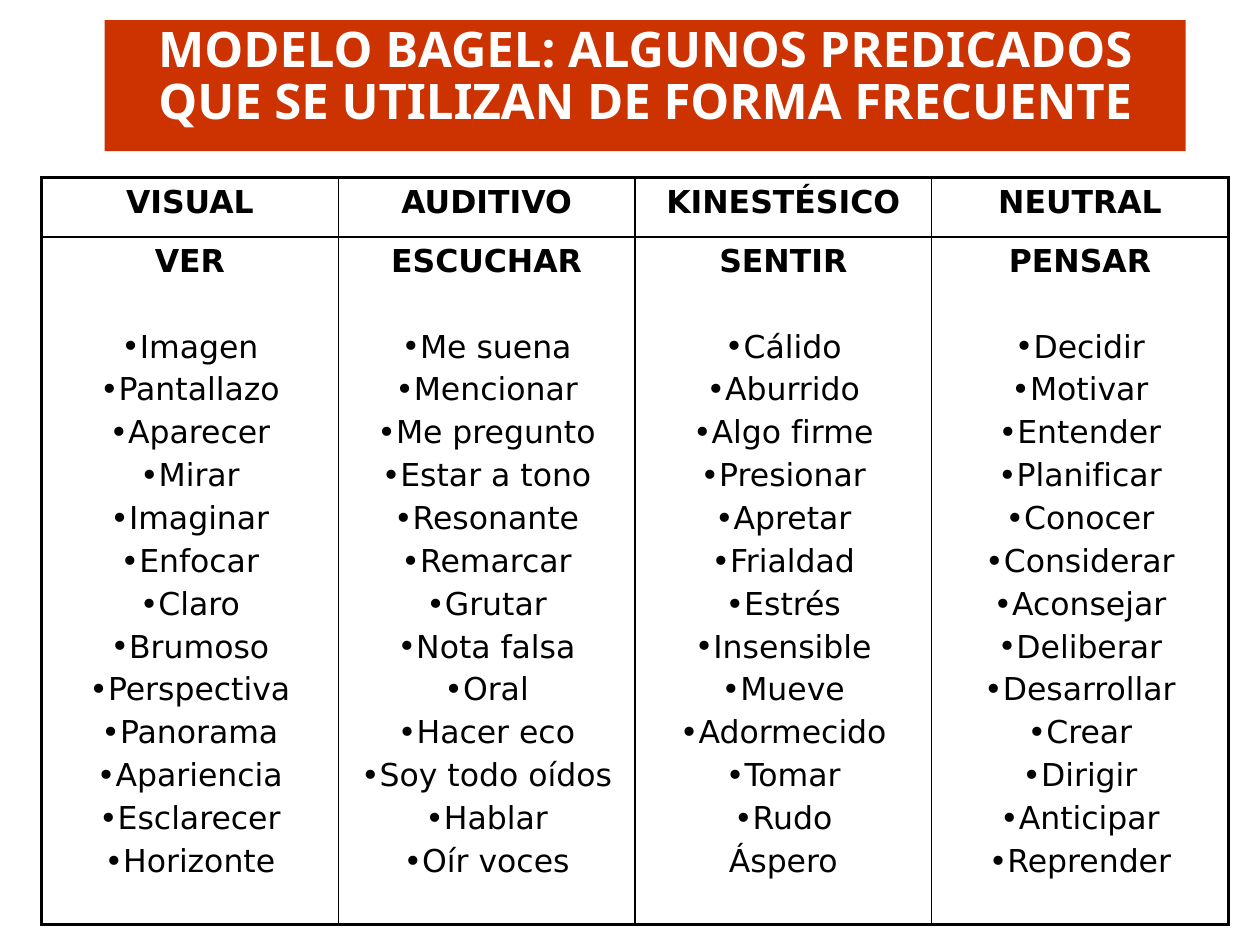
from dataclasses import dataclass

from lxml import etree
from pptx import Presentation
from pptx import util as u
from pptx.dml.color import RGBColor
from pptx.enum import lang, shapes, text
from pptx.oxml import ns

THICK, THIN = 2.25, 1
SPANISH = lang.MSO_LANGUAGE_ID.SPANISH
BODY_FONT = {"name": "DejaVu Sans", "size": u.Pt(18), "language_id": SPANISH}
TITLE_FONT = {"name": "Noto Sans", "size": u.Pt(28), "bold": True, "language_id": SPANISH}
LINE_GAP, LIST_GAP = 3.6, 28.1


@dataclass
class Channel:
    name: str
    verb: str
    words: list[str]
    plain_words: tuple[str, ...] = ()


CHANNELS = [
    Channel("VISUAL", "VER", [
        "Imagen", "Pantallazo", "Aparecer", "Mirar", "Imaginar", "Enfocar", "Claro",
        "Brumoso", "Perspectiva", "Panorama", "Apariencia", "Esclarecer", "Horizonte"]),
    Channel("AUDITIVO", "ESCUCHAR", [
        "Me suena", "Mencionar", "Me pregunto", "Estar a tono", "Resonante", "Remarcar",
        "Grutar", "Nota falsa", "Oral", "Hacer eco", "Soy todo oídos", "Hablar", "Oír voces"]),
    Channel("KINESTÉSICO", "SENTIR", [
        "Cálido", "Aburrido", "Algo firme", "Presionar", "Apretar", "Frialdad", "Estrés",
        "Insensible", "Mueve", "Adormecido", "Tomar", "Rudo", "Áspero"], ("Áspero",)),
    Channel("NEUTRAL", "PENSAR", [
        "Decidir", "Motivar", "Entender", "Planificar", "Conocer", "Considerar", "Aconsejar",
        "Deliberar", "Desarrollar", "Crear", "Dirigir", "Anticipar", "Reprender"]),
]


def color(value: str) -> RGBColor:
    return RGBColor.from_string(value)


def write(para, words: str, font: dict, ink: str) -> None:
    para.alignment = text.PP_ALIGN.CENTER
    span = para.add_run()
    span.text = words
    for key, value in font.items():
        setattr(span.font, key, value)
    span.font.color.rgb = color(ink)


def add_bullet(para) -> None:
    props = para._p.get_or_add_pPr()
    props.set("marL", "0")
    props.set("indent", "0")
    etree.SubElement(props, ns.qn("a:buFont")).set("typeface", BODY_FONT["name"])
    etree.SubElement(props, ns.qn("a:buChar")).set("char", "•")


def add_borders(cell, widths: dict[str, float]) -> None:
    props = cell._tc.get_or_add_tcPr()
    for index, (side, width) in enumerate(widths.items()):
        line = etree.Element(ns.qn(f"a:ln{side}"), w=str(u.Pt(width)))
        fill = etree.SubElement(line, ns.qn("a:solidFill"))
        etree.SubElement(fill, ns.qn("a:srgbClr"), val="000000")
        props.insert(index, line)


def add_title(page) -> None:
    box = page.shapes.add_shape(
        shapes.MSO_SHAPE.RECTANGLE,
        u.Inches(0.83), u.Inches(0.16), u.Inches(8.58), u.Inches(1.04))
    box.shadow.inherit = False
    box.fill.solid()
    box.fill.fore_color.rgb = color("CC3300")
    box.line.fill.background()
    frame = box.text_frame
    settings = {"word_wrap": True, "auto_size": text.MSO_AUTO_SIZE.SHAPE_TO_FIT_TEXT,
                "vertical_anchor": text.MSO_ANCHOR.TOP}
    for key, value in settings.items():
        setattr(frame, key, value)
    para = frame.paragraphs[0]
    para.line_spacing = 0.88
    write(para, "MODELO BAGEL: ALGUNOS PREDICADOS QUE SE UTILIZAN DE FORMA FRECUENTE",
          TITLE_FONT, "FFFFFF")


def add_words(frame, channel: Channel) -> None:
    for index, word in enumerate(channel.words):
        para = frame.add_paragraph()
        para.space_before = u.Pt(LINE_GAP if index else LIST_GAP)
        write(para, word, BODY_FONT | {"bold": False}, "000000")
        if word not in channel.plain_words:
            add_bullet(para)


def add_channels(page, channels: list[Channel]) -> None:
    table = page.shapes.add_table(
        2, len(channels),
        u.Inches(0.33), u.Inches(1.41), u.Inches(9.42), u.Inches(5.94)).table
    table.first_row = table.horz_banding = False
    for row, height in zip(table.rows, (0.47, 5.46)):
        row.height = u.Inches(height)
    last = len(channels) - 1
    for column, channel in enumerate(channels):
        for row, heading in enumerate((channel.name, channel.verb)):
            cell = table.cell(row, column)
            cell.fill.background()
            write(cell.text_frame.paragraphs[0], heading, BODY_FONT | {"bold": True}, "000000")
            add_borders(cell, {
                "L": THICK if column == 0 else THIN,
                "R": THICK if column == last else THIN,
                "T": THICK if row == 0 else THIN,
                "B": THICK if row == 1 else THIN,
            })
        add_words(table.cell(1, column).text_frame, channel)


def main() -> None:
    deck = Presentation()
    deck.slide_width, deck.slide_height = u.Inches(10), u.Inches(7.5)
    page = deck.slides.add_slide(deck.slide_layouts[6])
    add_channels(page, CHANNELS)
    add_title(page)
    deck.save("out.pptx")


if __name__ == "__main__":
    main()
